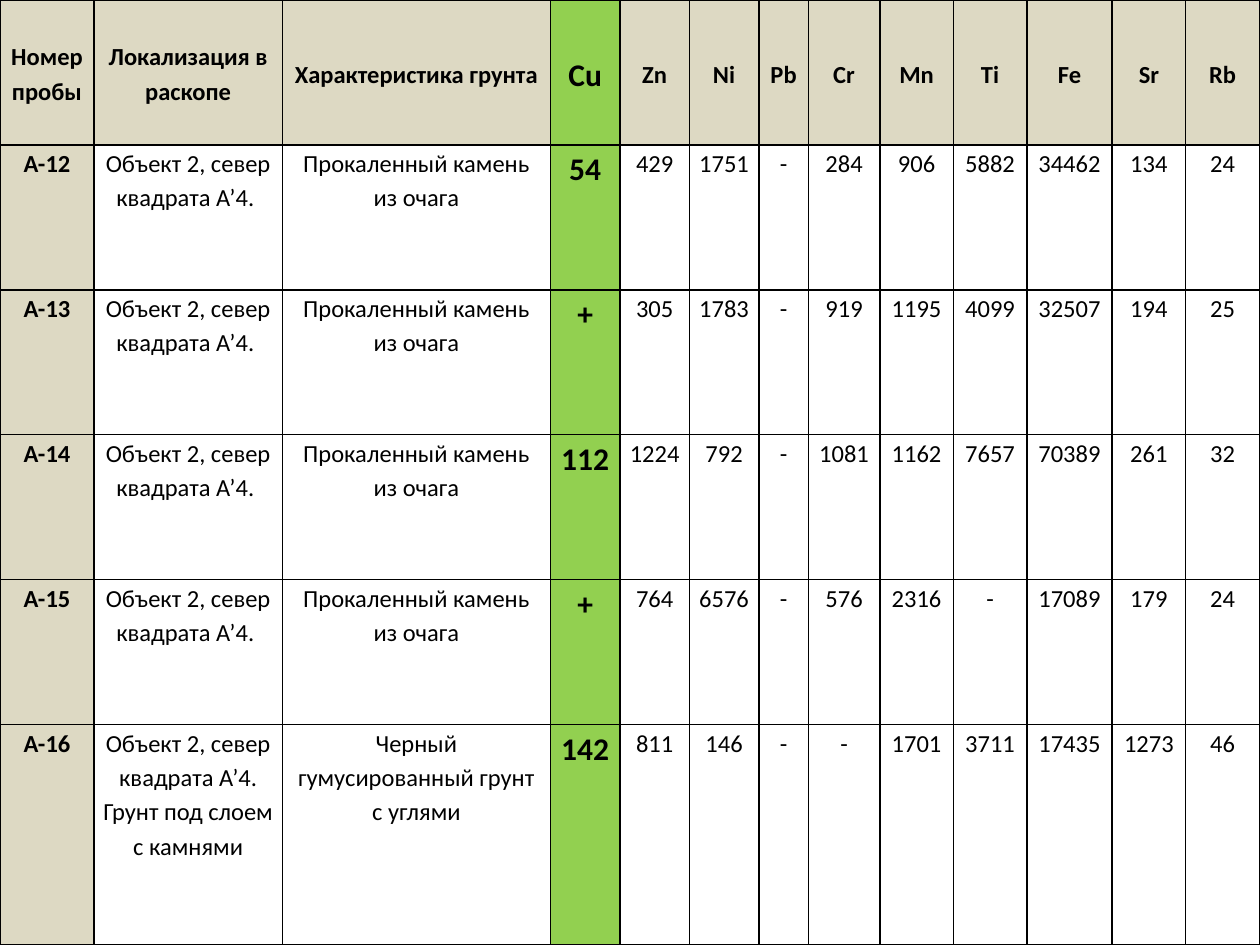
from dataclasses import dataclass

from lxml import etree
from pptx import Presentation
from pptx.dml.color import RGBColor
from pptx.enum.text import MSO_ANCHOR, PP_ALIGN
from pptx.oxml.ns import qn
from pptx.util import Pt

CENTER = PP_ALIGN.CENTER
MIDDLE = MSO_ANCHOR.MIDDLE
TOP = MSO_ANCHOR.TOP


@dataclass(frozen=True)
class Theme:
    font: str = "Calibri"
    ink: str = "000000"
    paper: str = "FFFFFF"
    sand: str = "DDD9C3"
    green: str = "92D050"
    size: int = 14
    large: int = 18
    space: float = 1.15
    inset: float = 5
    line: float = 1


THEME = Theme()
WIDTH, HEIGHT = 720, 540
COLS = [53.7, 107.7, 153.2, 39.7, 39.7, 39.7, 28.3,
        40.9, 42, 42, 48.8, 42, 42.3]
ROWS = [82.8] * 5 + [126]
COPPER = 3

PLACE = "Объект 2, север квадрата А’4. "
STONE = "Прокаленный камень из очага"
HEAD = ["Номер пробы", "Локализация в раскопе", "Характеристика грунта",
        "Cu", "Zn", "Ni", "Pb", "Cr", "Mn", "Ti", "Fe", "Sr", "Rb"]
SAMPLES = [
    ("А-12", PLACE, STONE, "54 429 1751 - 284 906 5882 34462 134 24"),
    ("А-13", PLACE, STONE, "+ 305 1783 - 919 1195 4099 32507 194 25"),
    ("А-14", PLACE, STONE, "112 1224 792 - 1081 1162 7657 70389 261 32"),
    ("А-15", PLACE, STONE, "+ 764 6576 - 576 2316 - 17089 179 24"),
    ("А-16", PLACE + "Грунт под слоем с камнями",
     "Черный гумусированный грунт с углями",
     "142 811 146 - - 1701 3711 17435 1273 46"),
]


def add_edges(cell):
    props = cell._tc.get_or_add_tcPr()
    for side in ("a:lnL", "a:lnR", "a:lnT", "a:lnB"):
        line = etree.SubElement(props, qn(side), w=str(Pt(THEME.line)))
        fill = etree.SubElement(line, qn("a:solidFill"))
        etree.SubElement(fill, qn("a:srgbClr"), val=THEME.ink)


def fill_cell(cell, text, color, size, bold, anchor):
    add_edges(cell)
    cell.fill.solid()
    cell.fill.fore_color.rgb = RGBColor.from_string(color)
    cell.margin_left = cell.margin_right = Pt(THEME.inset)
    cell.margin_top = cell.margin_bottom = Pt(0)
    cell.vertical_anchor = anchor
    cell.text = text
    para = cell.text_frame.paragraphs[0]
    para.alignment = CENTER
    para.line_spacing = THEME.space
    font = para.font
    font.name = THEME.font
    font.size = Pt(size)
    font.bold = bold
    font.color.rgb = RGBColor.from_string(THEME.ink)


def add_grid(slide, data):
    frame = slide.shapes.add_table(
        len(ROWS), len(COLS), Pt(0), Pt(0), Pt(WIDTH), Pt(HEIGHT))
    table = frame.table
    table.first_row = table.horz_banding = False
    for col, width in zip(table.columns, COLS):
        col.width = Pt(width)
    for row, height in zip(table.rows, ROWS):
        row.height = Pt(height)
    for r, line in enumerate(data):
        for c, text in enumerate(line):
            copper = c == COPPER
            label = r == 0 or c == 0
            plain = THEME.sand if label else THEME.paper
            fill_cell(
                table.cell(r, c), text,
                color=THEME.green if copper else plain,
                size=THEME.large if copper else THEME.size,
                bold=copper or label,
                anchor=MIDDLE if r == 0 else TOP)


def main():
    deck = Presentation()
    deck.slide_width, deck.slide_height = Pt(WIDTH), Pt(HEIGHT)
    slide = deck.slides.add_slide(deck.slide_layouts[6])
    body = [[code, place, soil, *values.split()]
            for code, place, soil, values in SAMPLES]
    add_grid(slide, [HEAD, *body])
    deck.save("out.pptx")


if __name__ == "__main__":
    main()
